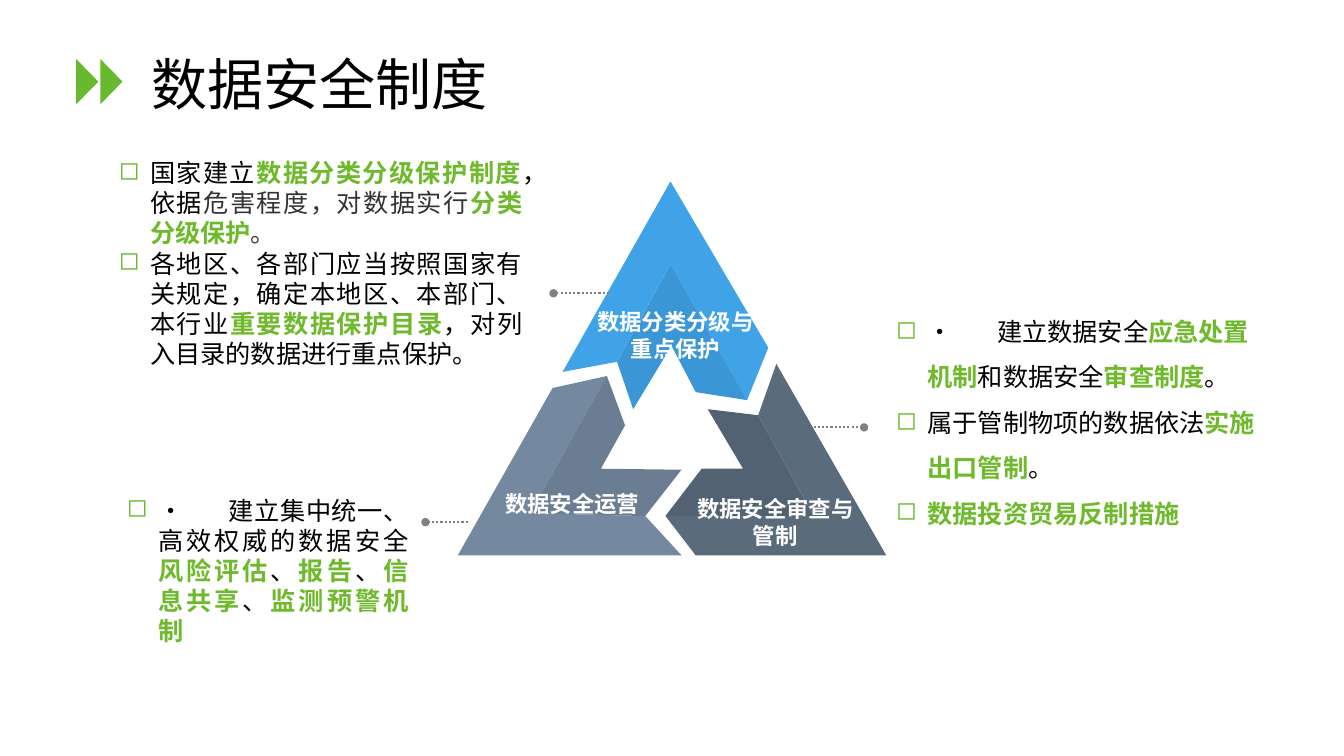
"""Build the data security systems slide with its three-part triangle."""
from dataclasses import dataclass

from lxml import etree
from pptx import Presentation
from pptx.dml.color import RGBColor
from pptx.enum import dml, shapes, text
from pptx.oxml import ns
from pptx.util import Inches, Pt


@dataclass(frozen=True)
class Theme:
    """Colours, fonts and type sizes of the slide."""
    accent: str = "68B92E"
    key: str = "6FBA2C"
    body: str = "000000"
    soft: str = "333333"
    label: str = "FFFFFF"
    leader: str = "808080"
    title_font: str = "Montserrat"
    text_font: str = "Noto Sans CJK SC"
    title_size: int = 40
    body_size: int = 18
    label_size: int = 16


THEME = Theme()
BODY, KEY, SOFT = THEME.body, THEME.key, THEME.soft

FACETS = [
    ("40A3E7", [(6.65, 1.8), (5.58, 3.69), (6.12, 3.59), (6.65, 2.62), (7.41, 3.97), (7.62, 3.45)]),
    ("3A96D5", [(6.66, 3.43), (6.28, 4.06), (6.12, 3.59), (6.65, 2.62), (7.41, 3.97), (6.9, 3.89)]),
    ("7488A0", [(6.02, 3.73), (5.26, 5.09), (6.4, 5.12), (6.76, 5.51), (4.54, 5.51), (5.48, 3.85)]),
    ("6B7D93", [(5.96, 4.65), (6.2, 4.22), (6.02, 3.73), (5.26, 5.09), (6.4, 5.12), (6.76, 4.66)]),
    ("526272", [(7.37, 4.65), (6.96, 4.65), (6.6, 5.12), (8.07, 5.12), (7.52, 4.12), (7.02, 4.06)]),
    ("5A6B7B", [(8.79, 5.51), (7.7, 3.61), (7.52, 4.12), (8.07, 5.12), (6.6, 5.12), (6.9, 5.51)]),
]

LEADERS = [(8.07, 8.57, 4.24), (6.04, 5.49, 2.91), (4.64, 4.22, 5.18)]

LABELS = [
    ((5.8, 3.01, 1.8, 0.64), "数据分类分级与重点保护"),
    ((4.79, 4.81, 1.77, 0.37), "数据安全运营"),
    ((6.76, 4.86, 1.86, 0.64), "数据安全审查与管制"),
]

CLASSIFICATION = [
    [("国家建立", BODY), ("数据分类分级保护制度", KEY), ("，依据", BODY),
     ("危害程度，对数据实行", SOFT), ("分类分级保护", KEY), ("。", SOFT)],
    [("各地区、各部门应当按照国家有关规定，确定本地区、本部门、本行业", BODY),
     ("重要数据保护目录", KEY), ("，对列入目录的数据进行重点保护。", BODY)],
]
OPERATION = [
    [("•\t建立集中统一、高效权威的数据安全", BODY), ("风险评估", KEY), ("、", BODY),
     ("报告", KEY), ("、", BODY), ("信息共享", KEY), ("、", BODY), ("监测预警机制", KEY)],
]
REVIEW = [
    [("•\t建立数据安全", BODY), ("应急处置机制", KEY), ("和数据安全", BODY),
     ("审查制度", KEY), ("。", BODY)],
    [("属于管制物项的数据依法", BODY), ("实施出口管制", KEY), ("。", BODY)],
    [("数据投资贸易反制措施", KEY)],
]


def rgb(value):
    """Return a colour from its hex digits."""
    return RGBColor.from_string(value)


def add_element(parent, tag, **attributes):
    """Append a DrawingML element and return it."""
    return etree.SubElement(parent, ns.qn(tag), attributes)


def set_font(paragraph, name, size):
    """Set the Latin and East Asian font and the size of a paragraph."""
    paragraph.font.name = name
    paragraph.font.size = Pt(size)
    properties = paragraph._p.pPr.find(ns.qn("a:defRPr"))
    add_element(properties, "a:ea", typeface=name)


def paint(shape, color):
    """Give a shape a flat fill without line or shadow."""
    shape.shadow.inherit = False
    shape.fill.solid()
    shape.fill.fore_color.rgb = rgb(color)
    shape.line.fill.background()


def add_chevrons(slide):
    """Draw the pair of triangles before the title."""
    group = slide.shapes.add_group_shape()
    for left in (0.88, 0.64):
        triangle = group.shapes.add_shape(
            shapes.MSO_SHAPE.ISOSCELES_TRIANGLE,
            Inches(left), Inches(0.7), Inches(0.45), Inches(0.22))
        triangle.rotation = 90
        paint(triangle, THEME.accent)


def set_title(slide, wording):
    """Place and format the title placeholder."""
    title = slide.shapes.title
    title.left, title.top = Inches(1.4), Inches(0.4)
    title.width, title.height = Inches(11.01), Inches(0.93)
    frame = title.text_frame
    frame.text = wording
    frame.auto_size = text.MSO_AUTO_SIZE.NONE
    frame.vertical_anchor = text.MSO_ANCHOR.MIDDLE
    paragraph = frame.paragraphs[0]
    paragraph.alignment = text.PP_ALIGN.LEFT
    paragraph.line_spacing = 0.9
    set_font(paragraph, THEME.title_font, THEME.title_size)
    paragraph.font.color.rgb = rgb(THEME.body)


def add_triangle(slide):
    """Draw the folded triangle from its facets."""
    group = slide.shapes.add_group_shape()
    for color, corners in FACETS:
        points = [(Inches(x), Inches(y)) for x, y in corners]
        builder = group.shapes.build_freeform(*points[0])
        builder.add_line_segments(points[1:], close=True)
        paint(builder.convert_to_shape(), color)


def add_leader(slide, start, end, height):
    """Draw a dotted level line with a round end."""
    leader = slide.shapes.add_connector(
        shapes.MSO_CONNECTOR.STRAIGHT,
        Inches(start), Inches(height), Inches(end), Inches(height))
    leader.line.color.rgb = rgb(THEME.leader)
    leader.line.width = Pt(1.5)
    leader.line.dash_style = dml.MSO_LINE.ROUND_DOT
    add_element(leader.line._get_or_add_ln(), "a:tailEnd", type="oval")
    add_element(leader._element.spPr, "a:effectLst")


def add_frame(slide, box):
    """Add a wrapping text box and return its text frame."""
    frame = slide.shapes.add_textbox(*map(Inches, box)).text_frame
    frame.word_wrap = True
    frame.auto_size = text.MSO_AUTO_SIZE.SHAPE_TO_FIT_TEXT
    return frame


def add_label(slide, box, wording):
    """Add a centred white label."""
    frame = add_frame(slide, box)
    frame.text = wording
    paragraph = frame.paragraphs[0]
    paragraph.alignment = text.PP_ALIGN.CENTER
    set_font(paragraph, THEME.text_font, THEME.label_size)
    paragraph.font.bold = True
    paragraph.font.color.rgb = rgb(THEME.label)


def set_bullet(paragraph):
    """Give a paragraph a hanging square bullet and a tab stop."""
    properties = paragraph._p.get_or_add_pPr()
    properties.set("marL", str(Inches(0.31)))
    properties.set("indent", str(-Inches(0.31)))
    bullet_color = add_element(properties, "a:buClr")
    add_element(bullet_color, "a:srgbClr", val=THEME.accent)
    add_element(properties, "a:buChar", char="◻")
    tabs = add_element(properties, "a:tabLst")
    add_element(tabs, "a:tab", pos=str(Inches(0.5)), algn="l")


def add_list(slide, box, items, alignment, spacing=1.0):
    """Add a bulleted list whose key phrases are bold green."""
    frame = add_frame(slide, box)
    for index, pieces in enumerate(items):
        paragraph = frame.add_paragraph() if index else frame.paragraphs[0]
        set_bullet(paragraph)
        paragraph.alignment = alignment
        paragraph.line_spacing = spacing
        set_font(paragraph, THEME.text_font, THEME.body_size)
        for wording, color in pieces:
            run = paragraph.add_run()
            run.text = wording
            run.font.color.rgb = rgb(color)
            run.font.bold = color == KEY


def main():
    """Build and save the slide."""
    presentation = Presentation()
    presentation.slide_width = Inches(13.33)
    presentation.slide_height = Inches(7.5)
    slide = presentation.slides.add_slide(presentation.slide_layouts[5])
    add_chevrons(slide)
    set_title(slide, "数据安全制度")
    add_triangle(slide)
    for leader in LEADERS:
        add_leader(slide, *leader)
    for box, wording in LABELS:
        add_label(slide, box, wording)
    add_list(slide, (1.08, 1.51, 4.2, 2.22), CLASSIFICATION, text.PP_ALIGN.JUSTIFY)
    add_list(slide, (1.16, 4.86, 2.99, 1.31), OPERATION, text.PP_ALIGN.JUSTIFY)
    add_list(slide, (8.79, 2.94, 3.91, 3.23), REVIEW, text.PP_ALIGN.LEFT, 1.5)
    presentation.save("out.pptx")


if __name__ == "__main__":
    main()
